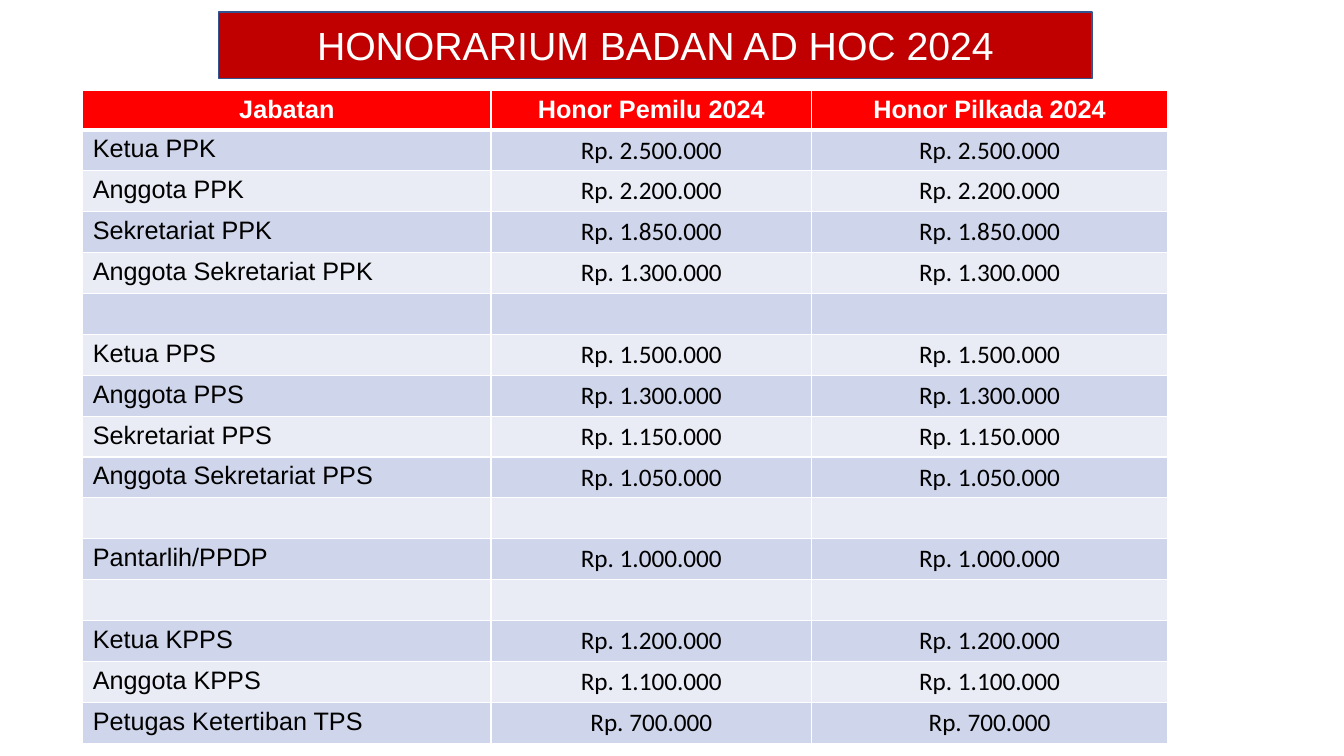
"""Build the slide that lists the 2024 honorarium of the ad hoc election bodies."""
from dataclasses import dataclass

from lxml import etree
from pptx import Presentation
from pptx import util as u
from pptx.dml.color import RGBColor
from pptx.enum import shapes, text
from pptx.oxml import ns


@dataclass(frozen=True)
class Theme:
    """Colours, fonts and type sizes of the slide."""
    banner: str = "C00000"
    banner_line: str = "325491"
    header: str = "FF0000"
    bands: tuple = ("CFD5EA", "E9EBF5")
    light: str = "FFFFFF"
    dark: str = "000000"
    label_font: str = "Arial"
    amount_font: str = "Calibri"
    title_size: int = 28
    table_size: int = 18


HEADINGS = ("Jabatan", "Honor Pemilu 2024", "Honor Pilkada 2024")
COLUMN_WIDTHS = (4.05, 3.18, 3.53)
HEADER_HEIGHT, ROW_HEIGHT = 0.39, 0.4
BODIES = (
    (("Ketua PPK", "2.500.000"),
     ("Anggota PPK", "2.200.000"),
     ("Sekretariat PPK", "1.850.000"),
     ("Anggota Sekretariat PPK", "1.300.000")),
    (("Ketua PPS", "1.500.000"),
     ("Anggota PPS", "1.300.000"),
     ("Sekretariat PPS", "1.150.000"),
     ("Anggota Sekretariat PPS", "1.050.000")),
    (("Pantarlih/PPDP", "1.000.000"),),
    (("Ketua KPPS", "1.200.000"),
     ("Anggota KPPS", "1.100.000"),
     ("Petugas Ketertiban TPS", "700.000")),
)


def write(frame, wording, *, font, size, color, bold=False,
          align=text.PP_ALIGN.CENTER):
    """Put one formatted run of text into a text frame."""
    paragraph = frame.paragraphs[0]
    paragraph.alignment = align
    run = paragraph.add_run()
    run.text = wording
    run.font.name = font
    run.font.size = u.Pt(size)
    run.font.bold = bold
    run.font.color.rgb = RGBColor.from_string(color)


def honorarium_rows():
    """Return the body rows, with an empty row between two bodies."""
    rows = []
    for body in BODIES:
        if rows:
            rows.append(("", "", ""))
        for position, honor in body:
            amount = f"Rp. {honor}"
            rows.append((position, amount, amount))
    return rows


class SlideBuilder:
    """Hold the theme and the current slide, and draw elements on it."""

    def __init__(self, slide, theme):
        """Keep the slide and its theme."""
        self.slide = slide
        self.theme = theme

    def banner(self, wording, left, top, width, height):
        """Draw the title on a coloured rectangle."""
        banner = self.slide.shapes.add_shape(
            shapes.MSO_SHAPE.RECTANGLE, u.Inches(left), u.Inches(top),
            u.Inches(width), u.Inches(height))
        banner.shadow.inherit = False
        banner.fill.solid()
        banner.fill.fore_color.rgb = RGBColor.from_string(self.theme.banner)
        banner.line.color.rgb = RGBColor.from_string(self.theme.banner_line)
        banner.line.width = u.Pt(1)
        banner.text_frame.word_wrap = True
        banner.text_frame.vertical_anchor = text.MSO_ANCHOR.MIDDLE
        write(banner.text_frame, wording, font=self.theme.label_font,
              size=self.theme.title_size, color=self.theme.light)

    def cell(self, cell, wording, fill, bottom=1, **style):
        """Give a cell its borders, fill and text."""
        properties = cell._tc.get_or_add_tcPr()
        for side, points in (("L", 1), ("R", 1), ("T", 1), ("B", bottom)):
            border = etree.SubElement(properties, ns.qn(f"a:ln{side}"),
                                      w=str(u.Pt(points)))
            solid = etree.SubElement(border, ns.qn("a:solidFill"))
            etree.SubElement(solid, ns.qn("a:srgbClr"), val=self.theme.light)
        cell.fill.solid()
        cell.fill.fore_color.rgb = RGBColor.from_string(fill)
        if wording:
            write(cell.text_frame, wording, size=self.theme.table_size, **style)

    def table(self, headings, rows, left, top):
        """Draw the honorarium table with a header and banded rows."""
        theme = self.theme
        heights = [HEADER_HEIGHT] + [ROW_HEIGHT] * len(rows)
        honors = self.slide.shapes.add_table(
            len(heights), len(headings), u.Inches(left), u.Inches(top),
            u.Inches(sum(COLUMN_WIDTHS)), u.Inches(sum(heights))).table
        for column, width in zip(honors.columns, COLUMN_WIDTHS):
            column.width = u.Inches(width)
        for row, height in zip(honors.rows, heights):
            row.height = u.Inches(height)
        for column, heading in enumerate(headings):
            self.cell(honors.cell(0, column), heading, theme.header, bottom=3,
                      font=theme.label_font, color=theme.light, bold=True)
        label = {"font": theme.label_font, "align": text.PP_ALIGN.JUSTIFY}
        amount = {"font": theme.amount_font}
        for index, entries in enumerate(rows):
            band = theme.bands[index % 2]
            for column, entry in enumerate(entries):
                self.cell(honors.cell(index + 1, column), entry, band,
                          color=theme.dark, **(amount if column else label))


def main():
    """Create the presentation and save it."""
    deck = Presentation()
    deck.slide_width, deck.slide_height = u.Inches(13.33), u.Inches(7.5)
    builder = SlideBuilder(deck.slides.add_slide(deck.slide_layouts[6]), Theme())
    builder.table(HEADINGS, honorarium_rows(), 0.82, 0.9)
    builder.banner("HONORARIUM BADAN AD HOC 2024", 2.17, 0.12, 8.66, 0.66)
    deck.save("out.pptx")


if __name__ == "__main__":
    main()
